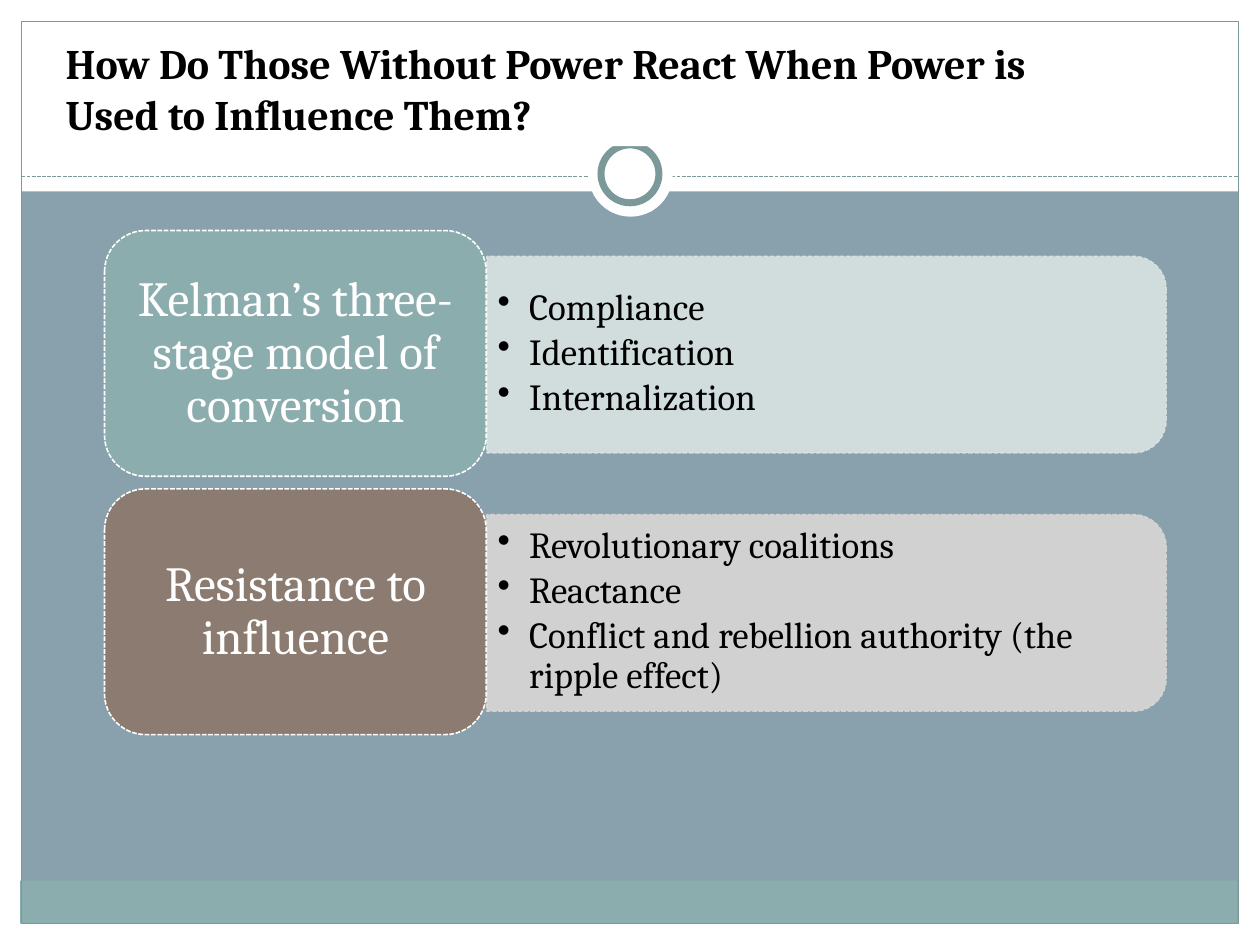
from dataclasses import dataclass
from typing import Optional

from lxml import etree
from pptx import Presentation
from pptx.dml.color import RGBColor
from pptx.enum.dml import MSO_LINE
from pptx.enum.shapes import MSO_CONNECTOR, MSO_SHAPE
from pptx.enum.text import MSO_ANCHOR, MSO_AUTO_SIZE, PP_ALIGN
from pptx.oxml.ns import qn
from pptx.util import Inches, Pt

RECTANGLE, ELLIPSE = MSO_SHAPE.RECTANGLE, MSO_SHAPE.OVAL
ROUNDED, ROUND_TOP = MSO_SHAPE.ROUNDED_RECTANGLE, MSO_SHAPE.ROUND_2_SAME_RECTANGLE
DASH = MSO_LINE.SQUARE_DOT  # stored as sysDash
TOP, MIDDLE = MSO_ANCHOR.TOP, MSO_ANCHOR.MIDDLE
LEFT, CENTER = PP_ALIGN.LEFT, PP_ALIGN.CENTER
FONT = "Cambria"
TITLE_ONLY = 5

COLORS = {
    "background": "88A1AD", "white": "FFFFFF", "black": "000000",
    "teal": "8CADAE", "outline": "7C999A", "brown": "8C7B70",
    "pale teal": "DAE3E3", "pale brown": "DAD7D5",
}

# The grid has 100 columns and 75 rows on a 10 by 7.5 inch slide
COLUMNS, ROWS = 100, 75
CELL = Inches(10) // COLUMNS
FIRST_ROW, ROW_PITCH = 18.3, 20.5


@dataclass
class Box:
    column: float
    row: float
    columns: float
    rows: float

    def lengths(self) -> list[int]:
        return [round(value * CELL)
                for value in (self.column, self.row, self.columns, self.rows)]


@dataclass
class Part:
    box: Box
    fill: Optional[str] = None
    line: Optional[str] = None
    width: float = 0.75
    kind: int = RECTANGLE
    dash: Optional[int] = None


@dataclass
class Topic:
    label: str
    color: str
    panel_color: str
    points: list[str]


FRAME = [
    Part(Box(0, 73.3, 100, 1.7), "white"),
    Part(Box(0, 0, 100, 15.2), "white"),
    Part(Box(0, 0, 1.7, 75), "white"),
    Part(Box(98.3, 0, 1.7, 75), "white"),
    Part(Box(1.6, 69.9, 96.6, 3.4), "teal"),
    Part(Box(1.7, 1.7, 96.6, 71.6), line="outline"),
]
RING = [
    Part(Box(46.7, 10.5, 6.7, 6.7), "white", kind=ELLIPSE),
    Part(Box(47.7, 11.5, 4.6, 4.6), "white", "outline", 4, ELLIPSE),
]
TOPICS = [
    Topic("Kelman’s three-stage model of conversion", "teal", "pale teal",
          ["Compliance", "Identification", "Internalization"]),
    Topic("Resistance to influence", "brown", "pale brown",
          ["Revolutionary coalitions", "Reactance",
           "Conflict and rebellion authority (the ripple effect)"]),
]


def rgb(name: str) -> RGBColor:
    return RGBColor.from_string(COLORS[name])


def apply(target, values: dict) -> None:
    for name, value in values.items():
        setattr(target, name, value)


def draw(slide, part: Part):
    shape = slide.shapes.add_shape(part.kind, *part.box.lengths())
    shape.shadow.inherit = False
    if part.fill:
        shape.fill.solid()
        shape.fill.fore_color.rgb = rgb(part.fill)
    else:
        shape.fill.background()
    if part.line:
        shape.line.color.rgb = rgb(part.line)
        apply(shape.line, {"width": Pt(part.width), "dash_style": part.dash})
    else:
        shape.line.fill.background()
    return shape


def write(shape, texts: list[str], size: float, color: str, insets: tuple[float, float],
          anchor=MIDDLE, align=LEFT, spacing: float = 0.9, bold: bool = False) -> None:
    frame = shape.text_frame
    side, end = (Inches(inset) for inset in insets)
    apply(frame, {"text": "\n".join(texts), "word_wrap": True, "vertical_anchor": anchor,
                  "margin_left": side, "margin_right": side,
                  "margin_top": end, "margin_bottom": end})
    for paragraph in frame.paragraphs:
        apply(paragraph, {"alignment": align, "line_spacing": spacing})
        apply(paragraph.font, {"name": FONT, "size": Pt(size), "bold": bold})
        paragraph.font.color.rgb = rgb(color)


def add_bullet(paragraph) -> None:
    paragraph.level = 1
    paragraph.space_after = Pt(0.15 * 21)
    properties = paragraph._p.get_or_add_pPr()
    properties.set("marL", str(Inches(0.25)))
    properties.set("indent", str(-Inches(0.25)))
    bullet = etree.Element(qn("a:buChar"), char="•")
    properties.find(qn("a:spcAft")).addnext(bullet)


def draw_topic(slide, topic: Topic, row: float) -> None:
    # Panel: a top-rounded rectangle turned to the right
    panel = draw(slide, Part(Box(57.8, row - 17.1, 15.6, 53.9), topic.panel_color,
                             topic.panel_color, 0.9, ROUND_TOP, DASH))
    panel.rotation = 90
    for color in panel._element.spPr.iter(qn("a:srgbClr")):
        etree.SubElement(color, qn("a:alpha"), val="90000")

    # Bulleted points
    points = slide.shapes.add_textbox(*Box(38.6, row + 2.7, 53.1, 14.1).lengths())
    write(points, topic.points, 21, "black", (0.09, 0.04))
    for paragraph in points.text_frame.paragraphs:
        add_bullet(paragraph)

    # Label
    label = draw(slide, Part(Box(8.3, row, 30.3, 19.5), topic.color,
                             "white", 0.9, ROUNDED, DASH))
    write(label, [topic.label], 28, "white", (0.12, 0.06), align=CENTER)


def draw_divider(slide) -> None:
    left, right, height = (round(value * CELL) for value in (1.7, 98.3, 14))
    divider = slide.shapes.add_connector(MSO_CONNECTOR.STRAIGHT, left, height, right, height)
    divider.line.color.rgb = rgb("outline")
    apply(divider.line, {"width": Pt(0.75), "dash_style": DASH})
    etree.SubElement(divider._element.spPr, qn("a:effectLst"))


def place_title(slide, text: str) -> None:
    title = slide.shapes.title
    apply(title, dict(zip(("left", "top", "width", "height"),
                          Box(4.2, 2.5, 79.2, 9.1).lengths())))
    title.fill.solid()
    title.fill.fore_color.rgb = rgb("white")
    write(title, [text], 24, "black", (0.1, 0.05), TOP, spacing=1.0, bold=True)
    title.text_frame.auto_size = MSO_AUTO_SIZE.NONE
    # The title covers the top of the ring
    slide.shapes._spTree.append(title._element)


def main() -> None:
    presentation = Presentation()
    presentation.slide_width = COLUMNS * CELL
    presentation.slide_height = ROWS * CELL
    slide = presentation.slides.add_slide(presentation.slide_layouts[TITLE_ONLY])
    slide.background.fill.solid()
    slide.background.fill.fore_color.rgb = rgb("background")

    # Frame, divider and ring
    for part in FRAME:
        draw(slide, part)
    draw_divider(slide)
    for part in RING:
        draw(slide, part)

    # Topics, one below the other
    for index, topic in enumerate(TOPICS):
        draw_topic(slide, topic, FIRST_ROW + index * ROW_PITCH)

    place_title(slide, "How Do Those Without Power React When Power is Used to Influence Them?")
    presentation.save("out.pptx")


if __name__ == "__main__":
    main()
